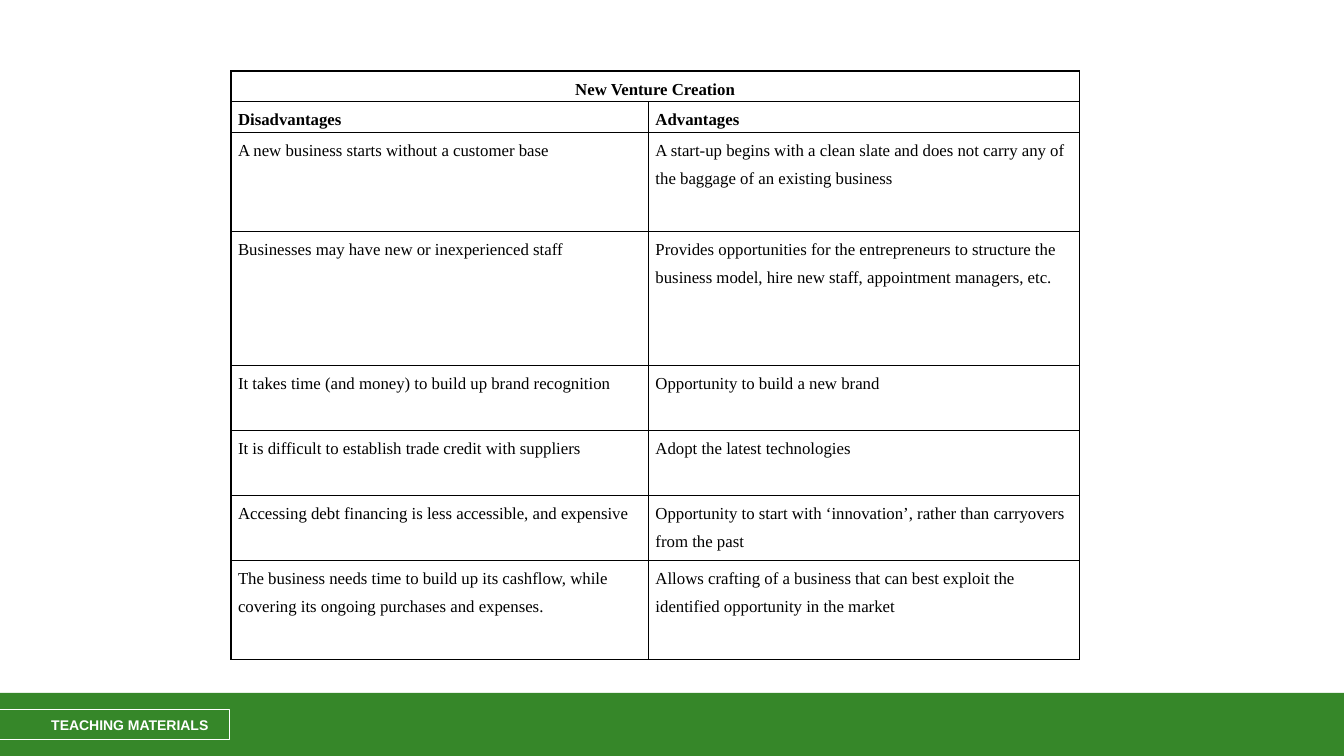
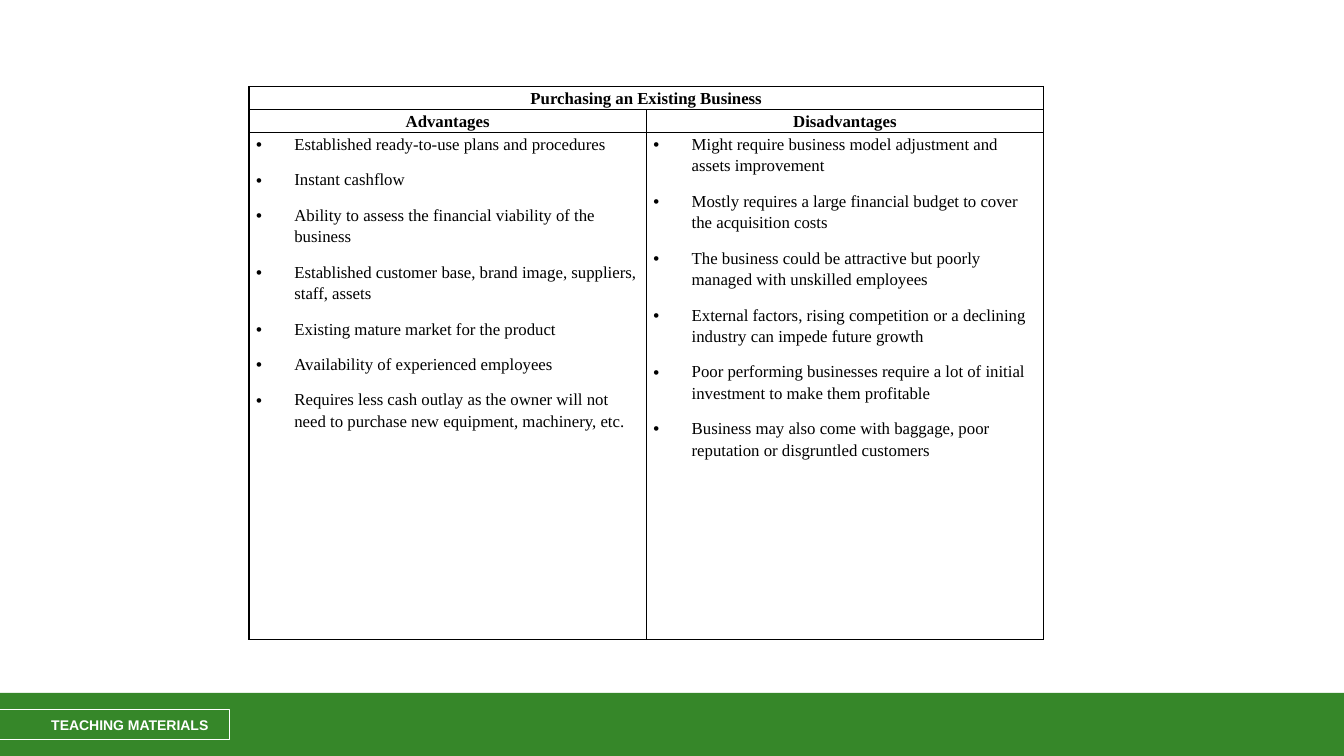
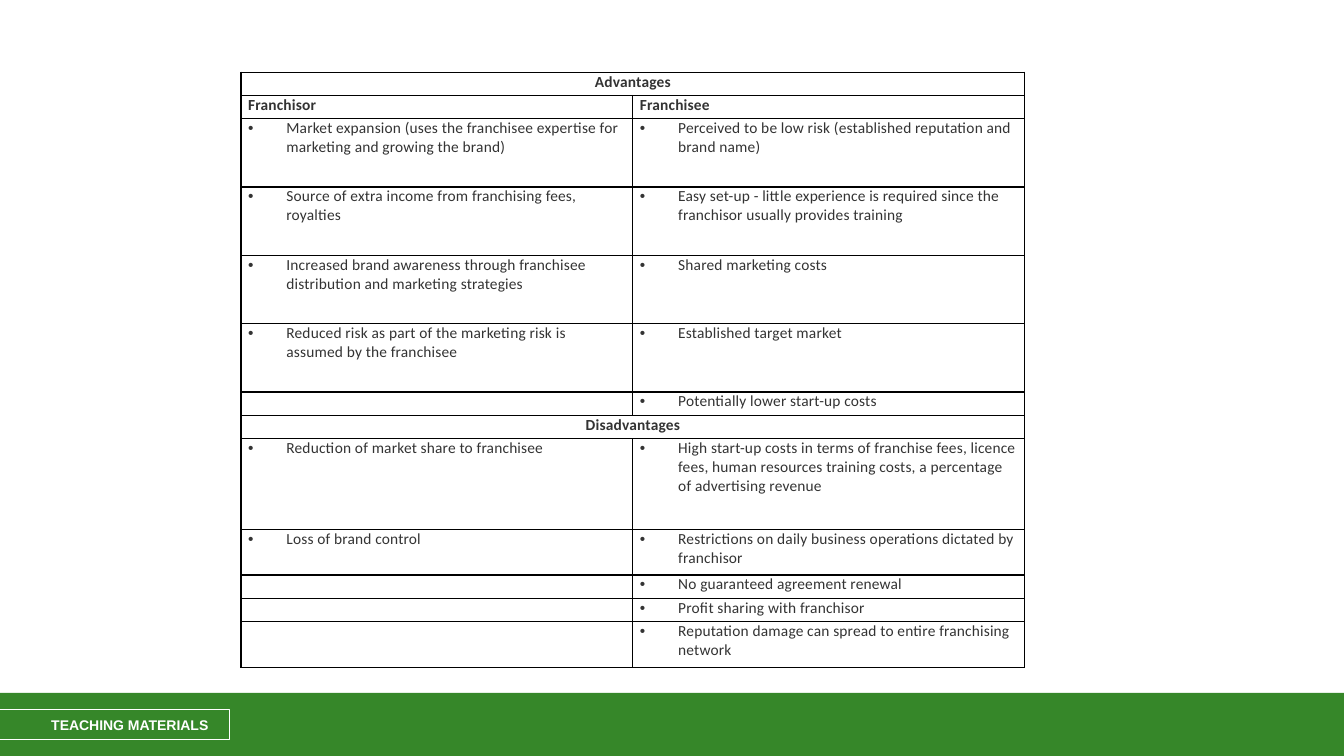
import pptx
import pptx.util
import pptx.dml.color
import pptx.enum.shapes
import pptx.enum.text
import pptx.oxml
import pptx.oxml.ns

COLORS = {"band": "368729", "white": "FFFFFF", "black": "000000", "ink": "333333"}
ALIGN = pptx.enum.text.PP_ALIGN
COLS, ROWS = 160, 90
SERIF = dict(font="Times New Roman", size=12, color="black", after=10)
SANS = dict(font="Calibri", size=11, color="ink", spc=10)

VENTURE = [
    (3.65, "title", ["New Venture Creation"]),
    (3.65, "head", ["Disadvantages", "Advantages"]),
    (11.83, "body", ["A new business starts without a customer base",
                     "A start-up begins with a clean slate and does not carry any of the baggage of an existing business"]),
    (15.9, "body", ["Businesses may have new or inexperienced staff",
                    "Provides opportunities for the entrepreneurs to structure the business model, "
                    "hire new staff, appointment managers, etc."]),
    (7.74, "body", ["It takes time (and money) to build up brand recognition", "Opportunity to build a new brand"]),
    (7.74, "body", ["It is difficult to establish trade credit with suppliers", "Adopt the latest technologies"]),
    (7.74, "body", ["Accessing debt financing is less accessible, and expensive",
                    "Opportunity to start with ‘innovation’, rather than carryovers from the past"]),
    (11.83, "body", ["The business needs time to build up its cashflow, while covering its ongoing purchases and expenses.",
                     "Allows crafting of a business that can best exploit the identified opportunity in the market"]),
]

PURCHASE = [
    (2.75, "title", ["Purchasing an Existing Business"]),
    (2.75, "head", ["Advantages", "Disadvantages"]),
    (60.36, "body", [
        ["Established ready-to-use plans and procedures",
         "Instant cashflow",
         "Ability to assess the financial viability of the business",
         "Established customer base, brand image, suppliers, staff, assets",
         "Existing mature market for the product",
         "Availability of experienced employees",
         "Requires less cash outlay as the owner will not need to purchase new equipment, machinery, etc."],
        ["Might require business model adjustment and assets improvement",
         "Mostly requires a large financial budget to cover the acquisition costs",
         "The business could be attractive but poorly managed with unskilled employees",
         "External factors, rising competition or a declining industry can impede future growth",
         "Poor performing businesses require a lot of initial investment to make them profitable",
         "Business may also come with baggage, poor reputation or disgruntled customers"]]),
]

FRANCHISE = [
    (2.77, "title", ["Advantages"]),
    (2.77, "head", ["Franchisor", "Franchisee"]),
    (8.14, "body", ["Market expansion (uses the franchisee expertise for marketing and growing the brand)",
                    "Perceived to be low risk (established reputation and brand name)"]),
    (8.14, "body", ["Source of extra income from franchising fees, royalties",
                    "Easy set-up - little experience is required since the franchisor usually provides training"]),
    (8.14, "body", ["Increased brand awareness through franchisee distribution and marketing strategies",
                    "Shared marketing costs"]),
    (8.14, "body", ["Reduced risk as part of the marketing risk is assumed by the franchisee",
                    "Established target market"]),
    (2.77, "body", ["", "Potentially lower start-up costs"]),
    (2.77, "title", ["Disadvantages"]),
    (10.83, "body", ["Reduction of market share to franchisee",
                     "High start-up costs in terms of franchise fees, licence fees, human resources training costs, "
                     "a percentage of advertising revenue"]),
    (5.42, "body", ["Loss of brand control", "Restrictions on daily business operations dictated by franchisor"]),
    (2.77, "body", ["", "No guaranteed agreement renewal"]),
    (2.77, "body", ["", "Profit sharing with franchisor"]),
    (5.42, "body", ["", "Reputation damage can spread to entire franchising network"]),
]


def add_xml(parent, xml):
    ns = pptx.oxml.ns.nsdecls("a")
    parent.append(pptx.oxml.parse_xml(xml.replace(" ", f" {ns} ", 1)))


def write(tf, text, font="Arial", size=10, color="black", bold=False, align=ALIGN.LEFT,
          line=None, after=None, spc=None, bullet=False):
    for i, part in enumerate([text] if isinstance(text, str) else text):
        p = tf.add_paragraph() if i else tf.paragraphs[0]
        if not part:
            add_xml(p._p, f'<a:endParaRPr sz="{size * 100}"/>')
            continue
        if bullet:
            pPr = p._p.get_or_add_pPr()
            indent = pptx.util.Inches(0.38)
            pPr.set("marL", str(indent))
            pPr.set("indent", str(-indent))
            add_xml(pPr, '<a:buFont typeface="Arial"/>')
            add_xml(pPr, '<a:buChar char="•"/>')
        p.alignment = align
        p.line_spacing = line
        if after is not None:
            p.space_after = pptx.util.Pt(after)
        r = p.add_run()
        r.text = part
        r.font.name = font
        r.font.size = pptx.util.Pt(size)
        r.font.bold = bold
        r.font.color.rgb = pptx.dml.color.RGBColor.from_string(COLORS[color])
        if spc:
            r._r.get_or_add_rPr().set("spc", str(spc))


class Deck:
    def __init__(self):
        self.prs = pptx.Presentation()
        self.prs.slide_width = pptx.util.Inches(13.33)
        self.prs.slide_height = pptx.util.Inches(7.5)
        self.slide = None

    def x(self, cols):
        return round(self.prs.slide_width * cols / COLS)

    def y(self, rows):
        return round(self.prs.slide_height * rows / ROWS)

    def box(self, left, top, width, height, fill=None, line=None):
        sp = self.slide.shapes.add_shape(pptx.enum.shapes.MSO_SHAPE.RECTANGLE,
                                         self.x(left), self.y(top), self.x(width), self.y(height))
        sp.shadow.inherit = False
        for style, color in ((sp.fill, fill), (sp.line.fill, line)):
            if color:
                style.solid()
                style.fore_color.rgb = pptx.dml.color.RGBColor.from_string(COLORS[color])
            else:
                style.background()
        return sp

    def new_slide(self):
        self.slide = self.prs.slides.add_slide(self.prs.slide_layouts[6])
        self.box(0, 82.5, COLS, 7.5, fill="band")
        tag = self.box(-3.4, 84.5, 30.75, 3.6, line="white")
        tag.line.width = pptx.util.Pt(0.75)
        tf = tag.text_frame
        tf.margin_left = self.x(9.5)
        tf.vertical_anchor = pptx.enum.text.MSO_ANCHOR.MIDDLE
        write(tf, "TEACHING MATERIALS", color="white", bold=True)

    def style_cell(self, cell):
        cell.margin_left = cell.margin_right = pptx.util.Inches(0.07)
        cell.margin_top = cell.margin_bottom = 0
        tcPr = cell._tc.get_or_add_tcPr()
        for side in "LRTB":
            add_xml(tcPr, f'<a:ln{side} w="{pptx.util.Pt(1)}"><a:solidFill>'
                          f'<a:srgbClr val="{COLORS["black"]}"/></a:solidFill></a:ln{side}>')
        cell.fill.background()

    def table(self, left, top, widths, rows, look, bullet=False, head_align=ALIGN.LEFT):
        heights = [row[0] for row in rows]
        tbl = self.slide.shapes.add_table(len(rows), len(widths), self.x(left), self.y(top),
                                          self.x(sum(widths)), self.y(sum(heights))).table
        tbl.first_row = tbl.horz_banding = False
        for col, width in zip(tbl.columns, widths):
            col.width = self.x(width)
        for i, (height, kind, texts) in enumerate(rows):
            tbl.rows[i].height = self.y(height)
            for j in range(len(widths)):
                self.style_cell(tbl.cell(i, j))
            if kind == "title":
                tbl.cell(i, 0).merge(tbl.cell(i, len(widths) - 1))
            align = {"title": ALIGN.CENTER, "head": head_align, "body": ALIGN.LEFT}[kind]
            for j, text in enumerate(texts):
                write(tbl.cell(i, j).text_frame, text, bold=kind != "body", align=align,
                      bullet=bullet and kind == "body", **look)


def main():
    deck = Deck()
    deck.new_slide()
    deck.table(27.5, 8.45, [49.7, 51.3], VENTURE, dict(SERIF, line=1.5))
    deck.new_slide()
    deck.table(29.65, 10.3, [47.3] * 2, PURCHASE, dict(SERIF, line=1.15),
               bullet=True, head_align=ALIGN.CENTER)
    deck.new_slide()
    deck.table(28.7, 8.6, [46.65] * 2, FRANCHISE, SANS, bullet=True)
    deck.prs.save("out.pptx")


if __name__ == "__main__":
    main()
